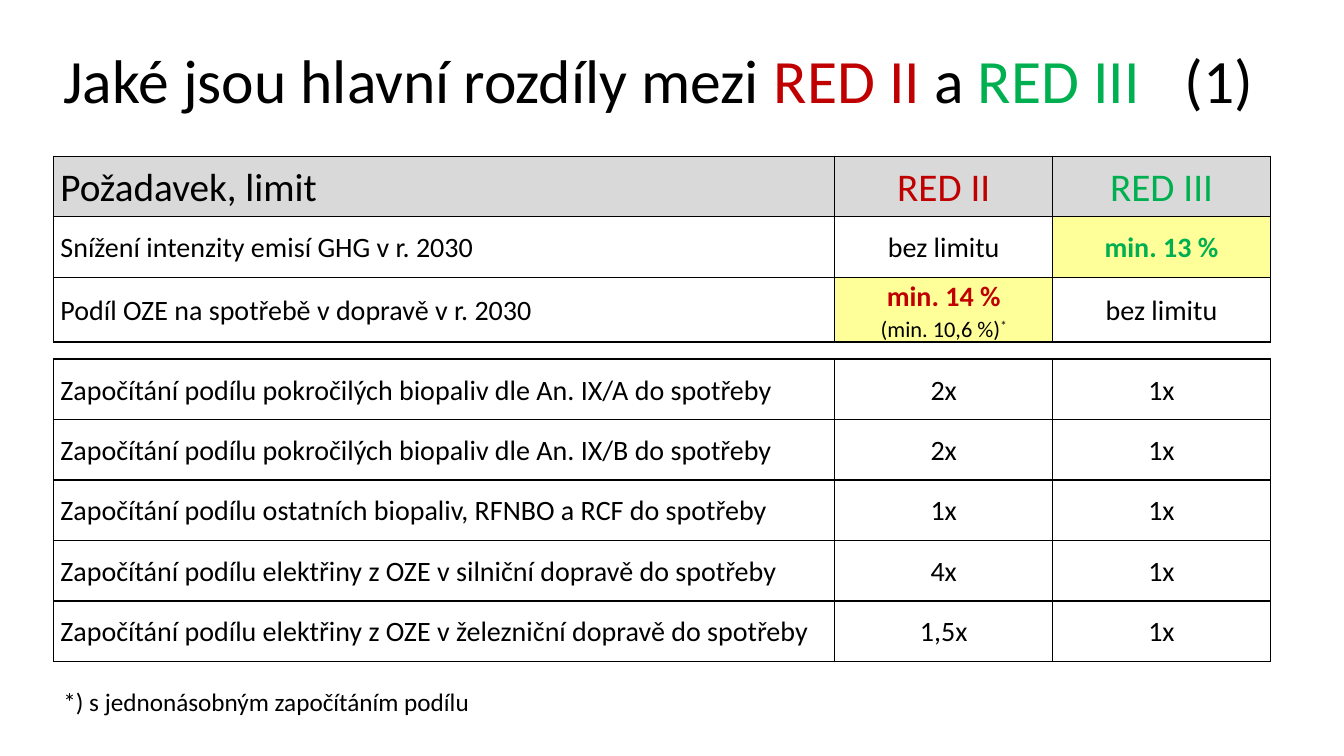
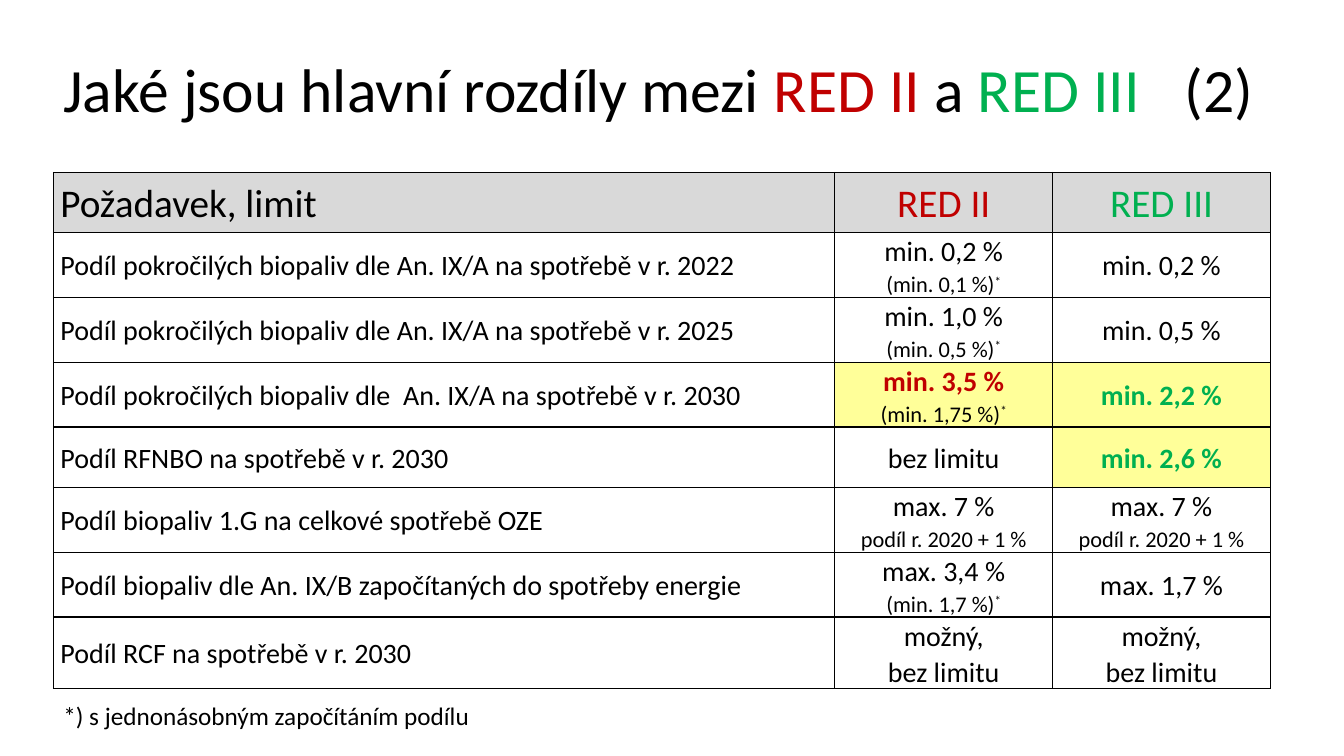
from dataclasses import dataclass
from lxml import etree
from pptx import Presentation
from pptx.dml.color import RGBColor
from pptx.enum import text as tx
from pptx.oxml import ns
from pptx.util import Inches, Pt


class Theme:
    font = "Calibri"
    black, red, green, grey, yellow = map(
        RGBColor.from_string, ("000000", "C00000", "00B050", "D9D9D9", "FFFF99"))
    title, head, body, foot, note, gap = 44, 28, 20, 18, 16, 4
    left = 0.53
    cols = (7.75, 2.16, 2.16)
    tints = (black, red, green)
    row, thin = 0.6, 0.17


@dataclass
class Cell:
    """Table entry: main text, smaller second line, star mark, highlight."""
    main: str
    note: str = ""
    star: bool = False
    key: bool = False


HEAD = ("Požadavek, limit", "RED II", "RED III")
GAP = None
FREE = "bez limitu"
SEVEN = Cell("max. 7 %", "podíl r. 2020 + 1 %")
MAYBE = "možný,\vbez limitu"

LIMITS = [
    ("Snížení intenzity emisí GHG v r. 2030", FREE, Cell("min. 13 %", key=True)),
    ("Podíl OZE na spotřebě v dopravě v r. 2030",
     Cell("min. 14 %", "(min. 10,6 %)", True, True), FREE),
    GAP,
    ("Započítání podílu pokročilých biopaliv dle An. IX/A do spotřeby", "2x", "1x"),
    ("Započítání podílu pokročilých biopaliv dle An. IX/B do spotřeby", "2x", "1x"),
    ("Započítání podílu ostatních biopaliv, RFNBO a RCF do spotřeby", "1x", "1x"),
    ("Započítání podílu elektřiny z OZE v silniční dopravě do spotřeby", "4x", "1x"),
    ("Započítání podílu elektřiny z OZE v železniční dopravě do spotřeby", "1,5x", "1x"),
]
SHARES = [
    ("Podíl pokročilých biopaliv dle An. IX/A na spotřebě v r. 2022",
     Cell("min. 0,2 %", "(min. 0,1 %)", True), "min. 0,2 %"),
    ("Podíl pokročilých biopaliv dle An. IX/A na spotřebě v r. 2025",
     Cell("min. 1,0 %", "(min. 0,5 %)", True), "min. 0,5 %"),
    ("Podíl pokročilých biopaliv dle  An. IX/A na spotřebě v r. 2030",
     Cell("min. 3,5 %", "(min. 1,75 %)", True, True), Cell("min. 2,2 %", key=True)),
    ("Podíl RFNBO na spotřebě v r. 2030", FREE, Cell("min. 2,6 %", key=True)),
    ("Podíl biopaliv 1.G na celkové spotřebě OZE", SEVEN, SEVEN),
    ("Podíl biopaliv dle An. IX/B započítaných do spotřeby energie",
     Cell("max. 3,4 %", "(min. 1,7 %)", True), "max. 1,7 %"),
    ("Podíl RCF na spotřebě v r. 2030", MAYBE, MAYBE),
]


def style(run, size, tint=Theme.black, bold=False):
    font = run.font
    font.name, font.size, font.bold = Theme.font, Pt(size), bold
    font.color.rgb = tint


def write(para, words, *look):
    run = para.add_run()
    run.text = words
    style(run, *look)
    return run


def frame(slide, left, top, width, height):
    box = slide.shapes.add_textbox(*map(Inches, (left, top, width, height)))
    box.text_frame.word_wrap = True
    return box.text_frame


def title(slide, height, number):
    body = frame(slide, Theme.left, 0.4, 12.3, height)
    body.vertical_anchor = tx.MSO_ANCHOR.MIDDLE
    para = body.paragraphs[0]
    para.line_spacing = 0.9
    tabs = etree.SubElement(para._p.get_or_add_pPr(), ns.qn("a:tabLst"))
    etree.SubElement(tabs, ns.qn("a:tab"), pos=str(Inches(11.12)), algn="l")
    for words, tint in (("Jaké jsou hlavní rozdíly mezi ", Theme.black),
                        ("RED II ", Theme.red), ("a ", Theme.black),
                        ("RED III", Theme.green), (f"\t({number})", Theme.black)):
        write(para, words, Theme.title, tint)


def border(cell, sides):
    """Draw the named sides in black and clear the others."""
    props = cell._tc.get_or_add_tcPr()
    for side in "LRTB":
        line = etree.SubElement(props, ns.qn(f"a:ln{side}"), w=str(Pt(1)))
        if side in sides:
            fill = etree.SubElement(line, ns.qn("a:solidFill"))
            etree.SubElement(fill, ns.qn("a:srgbClr"), val=str(Theme.black))
        else:
            etree.SubElement(line, ns.qn("a:noFill"))


def paint(cell, tint):
    if tint is None:
        cell.fill.background()
    else:
        cell.fill.solid()
        cell.fill.fore_color.rgb = tint


def setup(cell, col, sides="LRTB", fill=None):
    """Give a cell its borders, fill and margins; return its paragraph."""
    border(cell, sides)
    paint(cell, fill)
    cell.margin_left = cell.margin_right = Inches(0.07)
    cell.margin_top = cell.margin_bottom = 0
    cell.vertical_anchor = tx.MSO_ANCHOR.MIDDLE
    para = cell.text_frame.paragraphs[0]
    para.alignment = tx.PP_ALIGN.CENTER if col else tx.PP_ALIGN.LEFT
    para.line_spacing, para.space_after = 1.07, Pt(8)
    return para


def entry(cell, col, item):
    item = item if isinstance(item, Cell) else Cell(item)
    para = setup(cell, col, fill=Theme.yellow if item.key else None)
    para.text = item.main
    for run in para.runs:
        style(run, Theme.body, Theme.tints[col] if item.key else Theme.black, item.key)
    if item.note:
        para.add_line_break()
        write(para, item.note, Theme.note)
    if item.star:
        star = write(para, "*", Theme.note)
        star.font._element.set("baseline", "30000")


def blank(cell, col):
    para = setup(cell, col, "TB")
    etree.SubElement(para._p, ns.qn("a:endParaRPr"), sz=str(Theme.gap * 100))


def grid(slide, top, rows):
    highs = [Theme.row] + [Theme.thin if row is GAP else Theme.row for row in rows]
    table = slide.shapes.add_table(
        len(highs), len(Theme.cols), Inches(Theme.left), Inches(top),
        Inches(sum(Theme.cols)), Inches(sum(highs))).table
    table.first_row = table.horz_banding = False
    for col, width in enumerate(Theme.cols):
        table.columns[col].width = Inches(width)
        para = setup(table.cell(0, col), col, fill=Theme.grey)
        write(para, HEAD[col], Theme.head, Theme.tints[col])
        for num, row in enumerate(rows, 1):
            cell = table.cell(num, col)
            if row is GAP:
                blank(cell, col)
            else:
                entry(cell, col, row[col])
    for row, high in zip(table.rows, highs):
        row.height = Inches(high)


def foot(slide, top):
    body = frame(slide, Theme.left, top, 7.28, 0.4)
    write(body.paragraphs[0], "*) s jednonásobným započítáním podílu", Theme.foot)


def main():
    deck = Presentation()
    deck.slide_width, deck.slide_height = Inches(13.33), Inches(7.5)
    pages = ((0.85, 1.55, LIMITS, 6.76), (1.03, 1.71, SHARES, 6.9))
    for number, (height, top, rows, base) in enumerate(pages, 1):
        slide = deck.slides.add_slide(deck.slide_layouts[6])
        title(slide, height, number)
        grid(slide, top, rows)
        foot(slide, base)
    deck.save("out.pptx")


if __name__ == "__main__":
    main()
